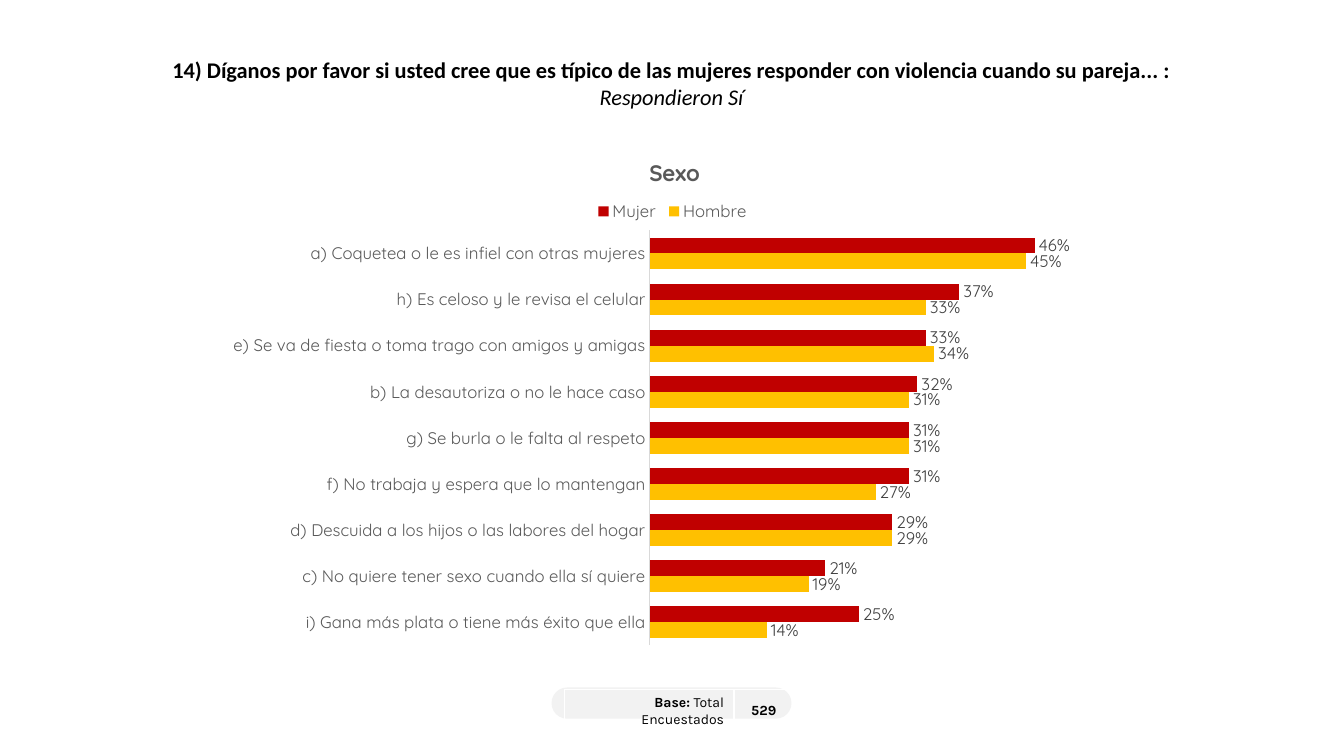
from lxml import etree
from pptx import Presentation
from pptx.chart.data import CategoryChartData
from pptx.dml.color import RGBColor
from pptx.enum.chart import XL_CHART_TYPE, XL_LABEL_POSITION, XL_LEGEND_POSITION, XL_TICK_MARK
from pptx.enum.shapes import MSO_SHAPE
from pptx.enum.text import MSO_ANCHOR, MSO_AUTO_SIZE, PP_ALIGN
from pptx.oxml import parse_xml
from pptx.oxml.ns import nsdecls, qn
from pptx.util import Inches, Pt

BAR_CLUSTERED = XL_CHART_TYPE.BAR_CLUSTERED
OUTSIDE_END = XL_LABEL_POSITION.OUTSIDE_END
LEGEND_TOP = XL_LEGEND_POSITION.TOP
NO_TICK = XL_TICK_MARK.NONE
ROUNDED = MSO_SHAPE.ROUNDED_RECTANGLE
MIDDLE = MSO_ANCHOR.MIDDLE
GROW = MSO_AUTO_SIZE.SHAPE_TO_FIT_TEXT
CENTER = PP_ALIGN.CENTER
RIGHT = PP_ALIGN.RIGHT

BLACK = RGBColor(0x00, 0x00, 0x00)
DARK_GRAY = RGBColor(0x40, 0x40, 0x40)
GRAY = RGBColor(0x59, 0x59, 0x59)
AXIS_GRAY = RGBColor(0xD9, 0xD9, 0xD9)
PILL_GRAY = RGBColor(0xF2, 0xF2, 0xF2)
WHITE = RGBColor(0xFF, 0xFF, 0xFF)
RED = RGBColor(0xC0, 0x00, 0x00)
AMBER = RGBColor(0xFF, 0xC0, 0x00)

ANSWERS = [
    ("i) Gana más plata o tiene más éxito que ella", 0.14, 0.25),
    ("c) No quiere tener sexo cuando ella sí quiere", 0.19, 0.21),
    ("d) Descuida a los hijos o las labores del hogar", 0.29, 0.29),
    ("f) No trabaja y espera que lo mantengan", 0.27, 0.31),
    ("g) Se burla o le falta al respeto", 0.31, 0.31),
    ("b) La desautoriza o no le hace caso", 0.31, 0.32),
    ("e) Se va de fiesta o toma trago con amigos y amigas", 0.34, 0.33),
    ("h) Es celoso y le revisa el celular", 0.33, 0.37),
    ("a) Coquetea o le es infiel con otras mujeres", 0.45, 0.46),
]
SERIES = [("Hombre", AMBER), ("Mujer", RED)]


def apply_format(target, values):
    for name, value in values.items():
        setattr(target, name, value)


class SlideBuilder:
    title_font = {"name": "Calibri", "size": Pt(16)}
    base_font = {"name": "Karla", "size": Pt(10)}
    chart_font = {"name": "Quicksand", "size": Pt(12), "bold": False}
    chart_title_font = {"name": "Quicksand", "size": Pt(16), "bold": True}

    def __init__(self, slide):
        self.slide = slide

    def box(self, left, top, width, height):
        return Inches(left), Inches(top), Inches(width), Inches(height)

    def style_font(self, font, values, color):
        apply_format(font, values)
        font.color.rgb = color

    def write_runs(self, paragraph, runs, style, alignment):
        paragraph.alignment = alignment
        for text, emphasis in runs:
            run = paragraph.add_run()
            run.text = text
            self.style_font(run.font, {**style, **emphasis}, BLACK)

    def add_title(self, position, lines):
        frame = self.slide.shapes.add_textbox(*self.box(*position)).text_frame
        apply_format(frame, {"word_wrap": True, "auto_size": GROW})
        for index, runs in enumerate(lines):
            paragraph = frame.add_paragraph() if index else frame.paragraphs[0]
            self.write_runs(paragraph, runs, self.title_font, CENTER)

    def add_pill(self, position):
        shape = self.slide.shapes.add_shape(ROUNDED, *self.box(*position))
        shape.shadow.inherit = False
        shape.adjustments[0] = 0.5
        shape.fill.solid()
        shape.fill.fore_color.rgb = PILL_GRAY
        shape.line.fill.background()

    def add_base_table(self, position, columns):
        table = self.slide.shapes.add_table(1, len(columns), *self.box(*position)).table
        apply_format(table, {"first_row": False, "horz_banding": False})
        for index, (width, alignment, border, runs) in enumerate(columns):
            table.columns[index].width = Inches(width)
            cell = table.cell(0, index)
            cell.vertical_anchor = MIDDLE
            self.write_runs(cell.text_frame.paragraphs[0], runs, self.base_font, alignment)
            cell.fill.background()
            cell._tc.get_or_add_tcPr().insert(0, parse_xml(
                f'<a:{border} {nsdecls("a")} w="12700"><a:solidFill>'
                f'<a:srgbClr val="{WHITE}"/></a:solidFill></a:{border}>'))

    def set_layout(self, element, **values):
        layout = element.find(qn("c:layout"))
        if layout is None:
            layout = etree.Element(qn("c:layout"))
            anchor = element.find(qn("c:legendPos"))
            if anchor is None:
                anchor = element.find(qn("c:tx"))
            if anchor is None:
                element.insert(0, layout)
            else:
                anchor.addnext(layout)
        for child in list(layout):
            layout.remove(child)
        manual = etree.SubElement(layout, qn("c:manualLayout"))
        for name, value in values.items():
            etree.SubElement(manual, qn(f"c:{name}"), val=str(value))

    def add_bar_chart(self, position, title, answers, series_styles):
        data = CategoryChartData(number_format="0%")
        data.categories = [answer[0] for answer in answers]
        for index, (name, _) in enumerate(series_styles, start=1):
            data.add_series(name, [answer[index] for answer in answers])
        chart = self.slide.shapes.add_chart(BAR_CLUSTERED, *self.box(*position), data).chart
        self.style_font(chart.font, self.chart_font, BLACK)

        apply_format(chart, {"has_title": True, "has_legend": True})
        run = chart.chart_title.text_frame.paragraphs[0].add_run()
        run.text = title
        self.style_font(run.font, self.chart_title_font, GRAY)
        chart.chart_title.include_in_layout = False
        self.set_layout(chart.chart_title._element, xMode="edge", yMode="edge", x=0.47, y=0.04)

        apply_format(chart.legend, {"position": LEGEND_TOP, "include_in_layout": False})
        self.style_font(chart.legend.font, self.chart_font, GRAY)

        category_axis = chart.category_axis
        apply_format(category_axis, {"major_tick_mark": NO_TICK, "minor_tick_mark": NO_TICK})
        self.style_font(category_axis.tick_labels.font, self.chart_font, GRAY)
        category_axis.format.line.color.rgb = AXIS_GRAY
        category_axis.format.line.width = Pt(0.75)
        apply_format(chart.value_axis, {"minimum_scale": 0, "maximum_scale": 0.5,
                                        "has_major_gridlines": False, "visible": False})

        plot = chart.plots[0]
        apply_format(plot, {"gap_width": 90, "overlap": 0, "vary_by_categories": False})
        for series, (_, color) in zip(plot.series, series_styles):
            series.format.fill.solid()
            series.format.fill.fore_color.rgb = color
            labels = series.data_labels
            apply_format(labels, {"show_value": True, "position": OUTSIDE_END,
                                  "number_format": "0%", "number_format_is_linked": False})
            self.style_font(labels.font, self.chart_font, DARK_GRAY)

        plot_area = chart._chartSpace.chart.plotArea
        self.set_layout(plot_area, layoutTarget="inner", xMode="edge", yMode="edge",
                        x=0.475, y=0.186, w=0.461, h=0.784)
        self.set_layout(chart.legend._element, xMode="edge", yMode="edge",
                        x=0.41, y=0.12, w=0.18, h=0.06)


def main():
    presentation = Presentation()
    presentation.slide_width = Inches(13.33)
    presentation.slide_height = Inches(7.5)
    builder = SlideBuilder(presentation.slides.add_slide(presentation.slide_layouts[6]))
    question = ("14) Díganos por favor si usted cree que es típico de las mujeres "
                "responder con violencia cuando su pareja... :")
    builder.add_title((1.25, 0.51, 10.82, 0.64), [
        [(question, {"bold": True})],
        [("Respondieron Sí", {"italic": True})],
    ])
    builder.add_pill((5.47, 6.82, 2.38, 0.31))
    builder.add_base_table((5.6, 6.84, 2.27, 0.27), [
        (1.68, RIGHT, "lnR", [("Base: ", {"bold": True}), ("Total Encuestados", {"bold": False})]),
        (0.59, CENTER, "lnL", [("529", {"bold": True})]),
    ])
    builder.add_bar_chart((2.17, 1.31, 9, 5.25), "Sexo", ANSWERS, SERIES)
    presentation.save("out.pptx")


if __name__ == "__main__":
    main()
